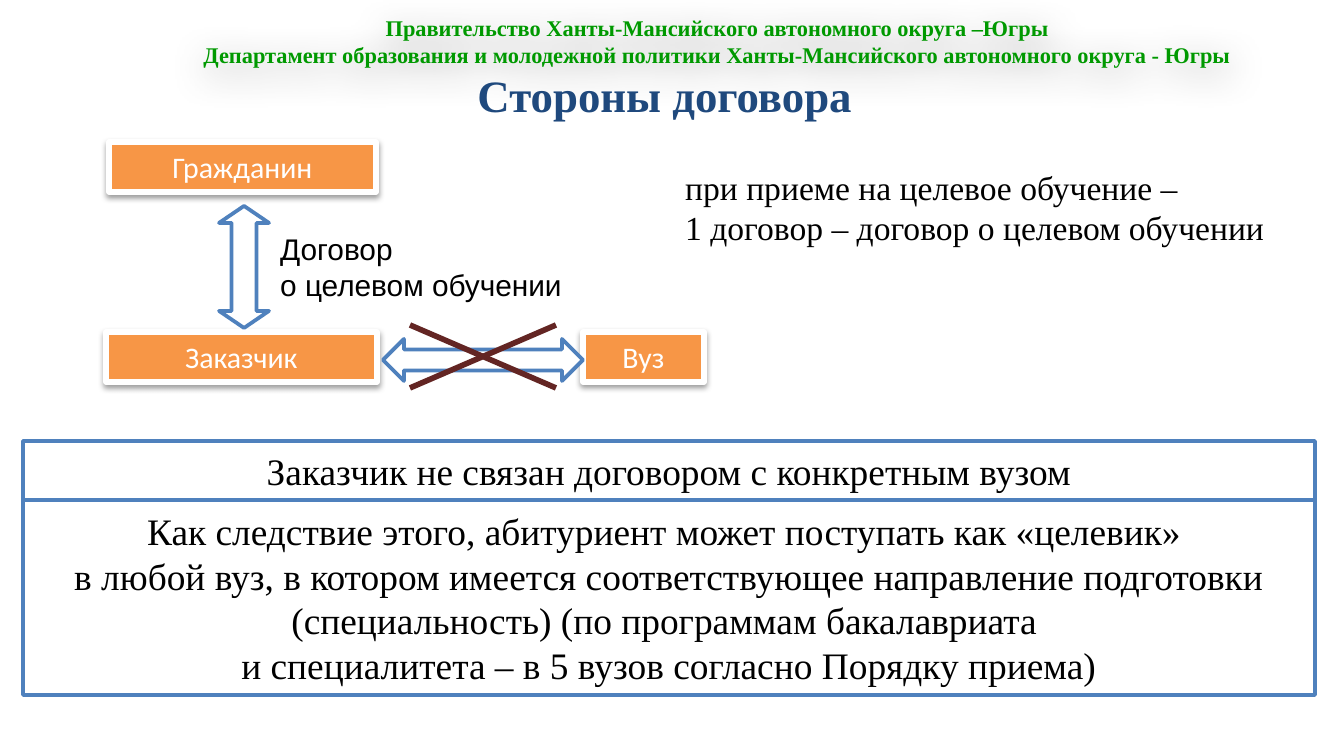
"""Builds the slide on the parties to a targeted-training contract."""
from lxml.etree import SubElement
from pptx import Presentation
from pptx.dml.color import RGBColor
from pptx.enum.shapes import MSO_CONNECTOR as LINK, MSO_SHAPE as SHAPE
from pptx.enum.text import MSO_ANCHOR as ANCHOR, PP_ALIGN as ALIGN
from pptx.oxml.ns import qn
from pptx.util import Emu, Pt

SCALE = 914400 / 134.4
COLORS = {
    "green": "009900", "navy": "1F497D", "blue": "4F81BD", "orange": "F79646",
    "maroon": "632523", "white": "FFFFFF", "black": "000000",
}
SERIF, SANS, BODY = "Times New Roman", "Arial", "Calibri"


def px(length):
    return Emu(round(length * SCALE))


def color(name):
    return RGBColor.from_string(COLORS[name])


class ContractSlide:
    def __init__(self, width, height):
        self.deck = Presentation()
        self.deck.slide_width, self.deck.slide_height = px(width), px(height)
        self.slide = self.deck.slides.add_slide(self.deck.slide_layouts[6])

    def fill_text(self, shape, lines, size, font, ink="black", align=ALIGN.CENTER,
                  anchor=ANCHOR.MIDDLE, bold=False):
        frame = shape.text_frame
        for name, value in {"word_wrap": True, "vertical_anchor": anchor}.items():
            setattr(frame, name, value)
        for index, line in enumerate(lines):
            paragraph = frame.add_paragraph() if index else frame.paragraphs[0]
            paragraph.alignment = align
            run = paragraph.add_run()
            run.text = line
            for name, value in {"name": font, "size": Pt(size), "bold": bold}.items():
                setattr(run.font, name, value)
            run.font.color.rgb = color(ink)

    def shadow(self, shape, blur, distance, opacity):
        shape.shadow.inherit = False
        effects = shape._element.spPr.find(qn("a:effectLst"))
        outer = SubElement(effects, qn("a:outerShdw"), blurRad=str(Pt(blur)),
                           dist=str(Pt(distance)), dir="5400000", rotWithShape="0")
        tint = SubElement(outer, qn("a:srgbClr"), val=COLORS["black"])
        SubElement(tint, qn("a:alpha"), val=str(opacity * 1000))

    def text(self, place, lines, size, font, **style):
        label = self.slide.shapes.add_textbox(*map(px, place))
        self.fill_text(label, lines, size, font, **style)
        return label

    def outline(self, kind, place, fill="white", line="blue", weight=2):
        figure = self.slide.shapes.add_shape(kind, *map(px, place))
        figure.shadow.inherit = False
        figure.fill.solid()
        figure.fill.fore_color.rgb = color(fill)
        figure.line.color.rgb = color(line)
        figure.line.width = Pt(weight)
        return figure

    def conclusion(self, place, lines):
        self.fill_text(self.outline(SHAPE.RECTANGLE, place), lines, 20, SERIF)

    def party(self, place, name):
        box = self.outline(SHAPE.RECTANGLE, place, "orange", "white", 3)
        self.shadow(box, 3.1, 1.6, 38)
        self.fill_text(box, [name], 16, BODY, "white")

    def arrow(self, place, rotation=0, head=0.5):
        arrow = self.outline(SHAPE.LEFT_RIGHT_ARROW, place)
        arrow.rotation = rotation
        arrow.adjustments[1] = head

    def stroke(self, *ends):
        stroke = self.slide.shapes.add_connector(LINK.STRAIGHT, *map(px, ends))
        stroke.line.color.rgb = color("maroon")
        stroke.line.width = Pt(3)
        SubElement(stroke._element.spPr, qn("a:effectLst"))


def main():
    page = ContractSlide(1344, 756)
    header = page.text((149, 8, 1137, 67), [
        "Правительство Ханты-Мансийского автономного округа –Югры",
        "Департамент образования и молодежной политики "
        "Ханты-Мансийского автономного округа - Югры",
    ], 12, SERIF, ink="green", bold=True, anchor=ANCHOR.TOP)
    page.shadow(header, 20, 4, 40)
    page.text((40, 63, 1249, 63), ["Стороны договора"], 24, SERIF, ink="navy", bold=True)

    page.conclusion((23, 441, 1292, 59),
                    ["Заказчик не связан договором с конкретным вузом"])
    page.conclusion((23, 500, 1292, 195), [
        "Как следствие этого, абитуриент может поступать как «целевик» ",
        "в любой вуз, в котором имеется соответствующее направление подготовки "
        "(специальность) (по программам бакалавриата ",
        "и специалитета – в 5 вузов согласно Порядку приема)",
    ])

    notes = {"align": ALIGN.LEFT, "anchor": ANCHOR.TOP}
    page.text((267, 224, 362, 86), ["Договор", "о целевом обучении"], 16, SANS, **notes)
    page.party((583, 332, 121, 50), "Вуз")
    page.party((106, 332, 271, 50), "Заказчик")
    page.arrow((183, 242, 122, 50), rotation=90, head=0.34)
    page.arrow((383, 339, 200, 42))
    page.party((109, 142, 267, 50), "Гражданин")
    for start, end in ((325, 388), (388, 325)):
        page.stroke(410, start, 556, end)
    page.text((672, 160, 672, 95), [
        "при приеме на целевое обучение –",
        "1 договор – договор о целевом обучении",
    ], 18, SERIF, **notes)

    page.deck.save("out.pptx")


if __name__ == "__main__":
    main()
